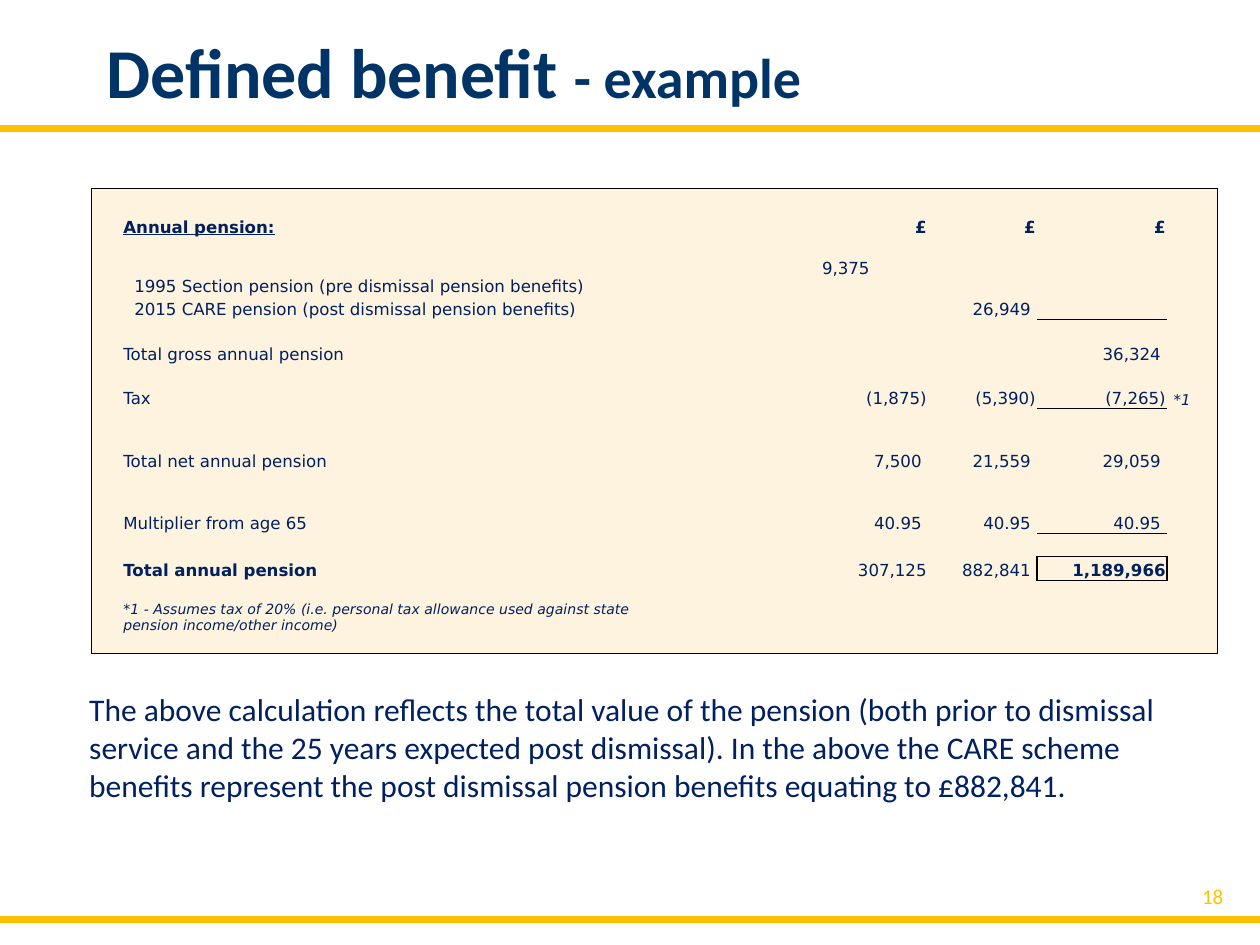
from dataclasses import dataclass

from lxml.etree import SubElement
from pptx import Presentation
from pptx.dml.color import RGBColor
from pptx.enum.shapes import MSO_CONNECTOR
from pptx.enum.text import MSO_ANCHOR, PP_ALIGN
from pptx.oxml.ns import qn
from pptx.slide import Slide
from pptx.table import Table, _Cell
from pptx.text.text import Font, TextFrame
from pptx.util import Cm, Pt

COLOURS = {
    "title": "003366",
    "text": "002060",
    "gold": "FFC000",
    "cream": "FEF3DE",
    "white": "FFFFFF",
    "border": "000000",
}
COLUMN_WIDTHS = [0.38, 2.72, 2.18, 2.95, 1.68, 1.73, 2.81, 2.18, 2.2, 2.62, 1.02]
ROW_HEIGHTS = [0.53, 0.46, 0.41, 0.78, 0.46, 0.45, 0.45, 0.45, 0.45,
               0.46, 0.8, 0.45, 0.8, 0.47, 0.48, 1.48]
LABEL, PRE, POST, TOTAL, MARK = 1, 7, 8, 9, 10
EDGE, STEP = 0.03, 0.13


@dataclass
class Entry:
    """One filled cell of the pension table."""

    row: int
    column: int
    text: str
    span: int = 1
    inset: float = EDGE
    size: float = 9.5
    bold: bool = False
    italic: bool = False
    underline: bool = False
    anchor: MSO_ANCHOR = MSO_ANCHOR.BOTTOM


@dataclass
class Rule:
    """Border lines on one cell, named by side letter."""

    row: int
    column: int
    sides: str
    width: float = 0.5


ENTRIES = [
    Entry(1, LABEL, "Annual pension:", 2, bold=True, underline=True),
    *[Entry(1, column, "£", bold=True) for column in (PRE, POST, TOTAL)],
    Entry(3, LABEL, "1995 Section pension (pre dismissal pension benefits)", 6, 0.25),
    Entry(3, PRE, "9,375", inset=1.18, anchor=MSO_ANCHOR.TOP),
    Entry(4, LABEL, "2015 CARE pension (post dismissal pension benefits)", 5, 0.25),
    Entry(4, POST, "26,949", inset=STEP),
    Entry(6, LABEL, "Total gross annual pension", 2),
    Entry(6, TOTAL, "36,324", inset=STEP),
    Entry(8, LABEL, "Tax"),
    Entry(8, PRE, "(1,875)"),
    Entry(8, POST, "(5,390)"),
    Entry(8, TOTAL, "(7,265)"),
    Entry(8, MARK, "*1", inset=STEP, size=8.5, italic=True),
    Entry(10, LABEL, "Total net annual pension", 2),
    Entry(10, PRE, "7,500", inset=STEP),
    Entry(10, POST, "21,559", inset=STEP),
    Entry(10, TOTAL, "29,059", inset=STEP),
    Entry(12, LABEL, "Multiplier from age 65", 2),
    *[Entry(12, column, "40.95", inset=STEP) for column in (PRE, POST, TOTAL)],
    Entry(14, LABEL, "Total annual pension", 2, bold=True),
    Entry(14, PRE, "307,125"),
    Entry(14, POST, "882,841", inset=STEP),
    Entry(14, TOTAL, "1,189,966", bold=True),
    Entry(15, LABEL, "*1 - Assumes tax of 20% (i.e. personal tax allowance used "
          "against state pension income/other income)", 5, size=8, italic=True,
          anchor=MSO_ANCHOR.MIDDLE),
]
INNER_RULES = [Rule(row, TOTAL, "B") for row in (4, 8, 12)] + [Rule(14, TOTAL, "LRTB", 1)]


def colour(name: str) -> RGBColor:
    """Look up a named colour."""
    return RGBColor.from_string(COLOURS[name])


def style(font: Font, size: float, shade: str, name: str = "Calibri", bold: bool = False) -> None:
    """Set the face, size, weight and colour of a font."""
    font.name, font.size, font.bold = name, Pt(size), bold
    font.color.rgb = colour(shade)


def add_box(page: Slide, left: float, top: float, width: float, height: float,
            anchor: MSO_ANCHOR = MSO_ANCHOR.MIDDLE) -> TextFrame:
    """Add a wrapping text box and return its frame."""
    frame = page.shapes.add_textbox(Cm(left), Cm(top), Cm(width), Cm(height)).text_frame
    frame.word_wrap = True
    frame.vertical_anchor = anchor
    return frame


def add_band(page: Slide, top: float) -> None:
    """Draw a gold line across the page."""
    band = page.shapes.add_connector(MSO_CONNECTOR.STRAIGHT, 0, Cm(top), Cm(25.4), Cm(top))
    band.line.color.rgb = colour("gold")
    band.line.width = Pt(4)
    SubElement(band._element.spPr, qn("a:effectLst"))


def draw_border(cell: _Cell, sides: str, width: float) -> None:
    """Put lines on the given sides of a cell."""
    properties = cell._tc.get_or_add_tcPr()
    for position, side in enumerate(side for side in "LRTB" if side in sides):
        line = properties.makeelement(qn(f"a:ln{side}"), {"w": str(Pt(width))})
        fill = SubElement(line, qn("a:solidFill"))
        SubElement(fill, qn("a:srgbClr"), val=COLOURS["border"])
        properties.insert(position, line)


def fill_entry(table: Table, entry: Entry) -> None:
    """Write one entry, spanning columns where needed."""
    cell = table.cell(entry.row, entry.column)
    if entry.span > 1:
        cell.merge(table.cell(entry.row, entry.column + entry.span - 1))
    is_amount = PRE <= entry.column <= TOTAL
    cell.margin_left = Cm(EDGE if is_amount else entry.inset)
    cell.margin_right = Cm(entry.inset if is_amount else EDGE)
    cell.vertical_anchor = entry.anchor
    cell.text = entry.text
    paragraph = cell.text_frame.paragraphs[0]
    paragraph.alignment = PP_ALIGN.RIGHT if is_amount else PP_ALIGN.LEFT
    style(paragraph.font, entry.size, "text", "DejaVu Sans", entry.bold)
    paragraph.font.italic = entry.italic
    paragraph.font.underline = entry.underline


def add_pension_table(page: Slide) -> None:
    """Build the pension calculation table."""
    rows, columns = len(ROW_HEIGHTS), len(COLUMN_WIDTHS)
    frame = page.shapes.add_table(rows, columns, Cm(1.85), Cm(3.8),
                                  Cm(sum(COLUMN_WIDTHS)), Cm(sum(ROW_HEIGHTS)))
    table = frame.table
    table.first_row = table.horz_banding = False
    table._tbl.tblPr.find(qn("a:tableStyleId")).text = "{2D5ABB26-0587-4C30-8999-92F81FD0307C}"
    for column, width in zip(table.columns, COLUMN_WIDTHS):
        column.width = Cm(width)
    for row, height in zip(table.rows, ROW_HEIGHTS):
        row.height = Cm(height)
    for entry in ENTRIES:
        fill_entry(table, entry)
    rules = {(rule.row, rule.column): rule for rule in INNER_RULES}
    for row in range(rows):
        for column in range(columns):
            cell = table.cell(row, column)
            cell.margin_top, cell.margin_bottom = Cm(0.02), 0
            cell.fill.solid()
            cell.fill.fore_color.rgb = colour("cream")
            if not cell.text:
                SubElement(cell.text_frame.paragraphs[0]._p, qn("a:endParaRPr"), sz="800")
            outer = {"L": column == 0, "R": column == columns - 1,
                     "T": row == 0, "B": row == rows - 1}
            edges = "".join(side for side, present in outer.items() if present)
            rule = rules.get((row, column), Rule(row, column, edges))
            draw_border(cell, rule.sides, rule.width)


def main() -> None:
    """Build and save the slide."""
    deck = Presentation()
    deck.slide_width, deck.slide_height = Cm(25.4), Cm(19.05)
    page = deck.slides.add_slide(deck.slide_layouts[6])
    for top in (18.54, 2.59):
        add_band(page, top)

    title = add_box(page, 1.9, 0.33, 19.4, 2.2)
    for text, size in (("Defined benefit ", 40), ("- example", 32)):
        span = title.paragraphs[0].add_run()
        span.text = text
        style(span.font, size, "title", bold=True)

    number = add_box(page, 18.21, 17.63, 6.7, 0.89).paragraphs[0]
    number.text = "18"
    number.alignment = PP_ALIGN.RIGHT
    style(number.font, 12, "gold")

    add_pension_table(page)

    summary = add_box(page, 1.55, 13.79, 23.06, 2.57, MSO_ANCHOR.TOP).paragraphs[0]
    summary.text = ("The above calculation reflects the total value of the pension (both prior "
                    "to dismissal service and the 25 years expected post dismissal). In the "
                    "above the CARE scheme benefits represent the post dismissal pension "
                    "benefits equating to £882,841.")
    style(summary.font, 18, "text")
    deck.save("out.pptx")


if __name__ == "__main__":
    main()
